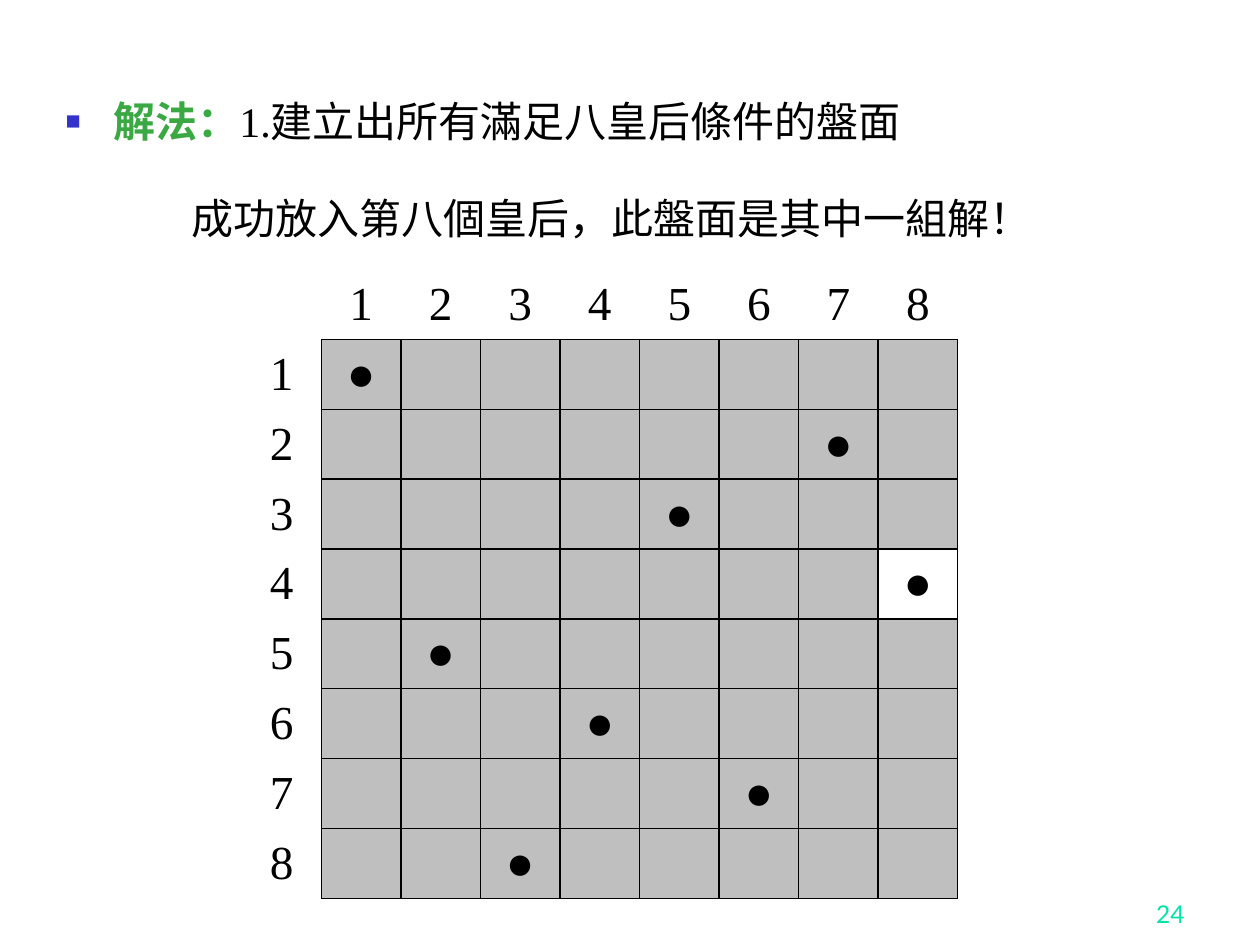
from typing import Any, NamedTuple

from pptx import Presentation
from pptx.dml.color import RGBColor as Rgb
from pptx.enum.text import MSO_ANCHOR as Anchor, MSO_AUTO_SIZE as AutoSize, PP_ALIGN as Align
from pptx.oxml import parse_xml
from pptx.oxml.ns import nsdecls
from pptx.util import Inches, Pt

SERIF = "Times New Roman"
BLACK, WHITE, GRAY = "000000", "FFFFFF", "BFBFBF"
GREEN, BLUE, MINT = "3BA943", "3333CC", "00E4A8"
SIZE = 8
QUEEN_COLUMNS = (1, 7, 5, 8, 2, 4, 6, 3)
LAST_QUEEN_ROW = 4


class Span(NamedTuple):
    text: str
    size: float
    color: str = BLACK
    font: str = SERIF
    bold: bool = False


class Square(NamedTuple):
    text: str
    fill: str
    sides: str


def apply(target: Any, values: dict[str, Any]) -> None:
    for name, value in values.items():
        setattr(target, name, value)


def paint(color_format: Any, color: str) -> None:
    color_format.rgb = Rgb.from_string(color)


def add_span(para: Any, span: Span) -> None:
    run = para.add_run()
    run.text = span.text
    apply(run.font, {"name": span.font, "size": Pt(span.size), "bold": span.bold})
    paint(run.font.color, span.color)


def set_bullet(para: Any, left: float, hanging: float, bullet: str = "") -> None:
    props = para._p.get_or_add_pPr()
    props.set("marL", str(Inches(left)))
    props.set("indent", str(Inches(-hanging)))
    if not bullet:
        props.append(parse_xml(f"<a:buNone {nsdecls('a')}/>"))
        return
    for part in (
        f'<a:buClr {nsdecls("a")}><a:srgbClr val="{BLUE}"/></a:buClr>',
        f'<a:buSzPct {nsdecls("a")} val="60000"/>',
        f'<a:buChar {nsdecls("a")} char="{bullet}"/>',
    ):
        props.append(parse_xml(part))


def set_borders(cell: Any, sides: str) -> None:
    props = cell._tc.get_or_add_tcPr()
    for place, side in enumerate("LRTB"):
        color = f'<a:solidFill><a:srgbClr val="{BLACK}"/></a:solidFill>'
        line = color if side in sides else "<a:noFill/>"
        props.insert(place, parse_xml(f'<a:ln{side} {nsdecls("a")} w="{Pt(1)}">{line}</a:ln{side}>'))


def square_at(row: int, column: int) -> Square:
    if row == 0 and column == 0:
        return Square("", WHITE, "")
    if row == 0:
        return Square(str(column), WHITE, "B")
    if column == 0:
        return Square(str(row), WHITE, "R")
    has_queen = QUEEN_COLUMNS[row - 1] == column
    fill = WHITE if has_queen and row == LAST_QUEEN_ROW else GRAY
    return Square("●" if has_queen else "", fill, "LRTB")


def draw_square(cell: Any, square: Square) -> None:
    apply(cell, {"vertical_anchor": Anchor.MIDDLE, "margin_top": 0, "margin_bottom": 0})
    cell.fill.solid()
    paint(cell.fill.fore_color, square.fill)
    set_borders(cell, square.sides)
    if square.text:
        para = cell.text_frame.paragraphs[0]
        para.alignment = Align.CENTER
        add_span(para, Span(square.text, 27))


def draw_board(page: Any) -> None:
    place = map(Inches, (1.92, 2.14, 5.68, 4.99))
    board = page.shapes.add_table(SIZE + 1, SIZE + 1, *place).table
    apply(board, {"first_row": False, "horz_banding": False})
    for row in range(SIZE + 1):
        for column in range(SIZE + 1):
            draw_square(board.cell(row, column), square_at(row, column))


def draw_solution(page: Any) -> None:
    box = page.placeholders[1]
    apply(box, {"left": Inches(0.42), "top": Inches(0.75), "width": Inches(8.83), "height": Inches(0.72)})
    frame = box.text_frame
    apply(frame, {"auto_size": AutoSize.NONE, "word_wrap": True, "vertical_anchor": Anchor.TOP})
    step = frame.paragraphs[0]
    step.line_spacing = 0.9
    set_bullet(step, 0.38, 0.38, "■")
    add_span(step, Span("解法：", 24, GREEN, bold=True))
    add_span(step, Span("1.建立出所有滿足八皇后條件的盤面", 24))
    result = frame.add_paragraph()
    apply(result, {"line_spacing": 0.9, "space_before": Pt(30)})
    set_bullet(result, 1, 0)
    add_span(result, Span("成功放入第八個皇后，此盤面是其中一組解！", 24))


def draw_page_number(page: Any) -> None:
    box = page.shapes.add_textbox(*map(Inches, (7.42, 6.92, 2.08, 0.5)))
    apply(box.text_frame, {"word_wrap": True, "vertical_anchor": Anchor.BOTTOM})
    para = box.text_frame.paragraphs[0]
    para.alignment = Align.RIGHT
    add_span(para, Span("24", 14, MINT, "Lato"))


def main() -> None:
    deck = Presentation()
    apply(deck, {"slide_width": Inches(10), "slide_height": Inches(7.5)})
    page = deck.slides.add_slide(deck.slide_layouts[1])
    title = page.shapes.title.element
    title.getparent().remove(title)
    draw_page_number(page)
    draw_solution(page)
    draw_board(page)
    deck.save("out.pptx")


if __name__ == "__main__":
    main()
